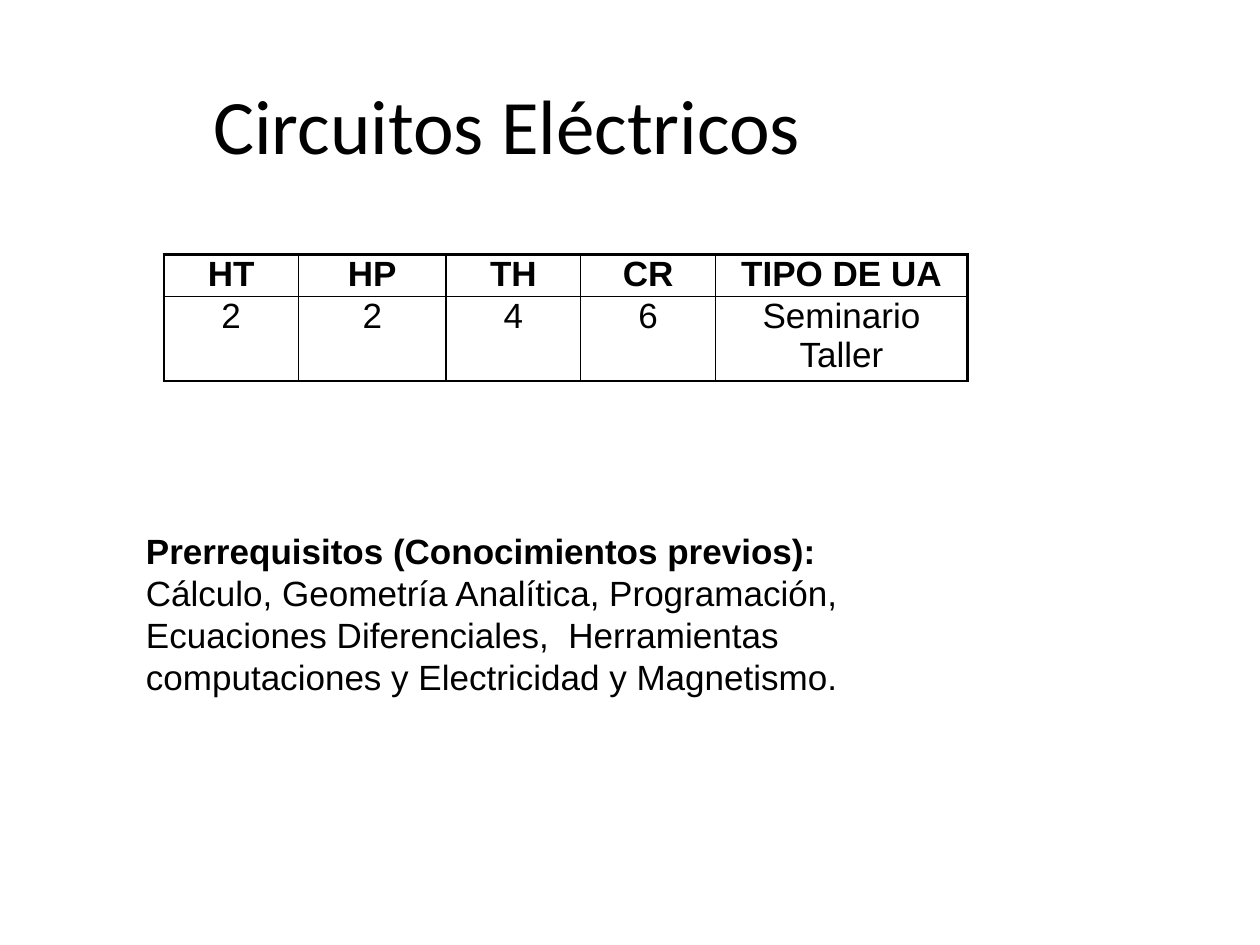
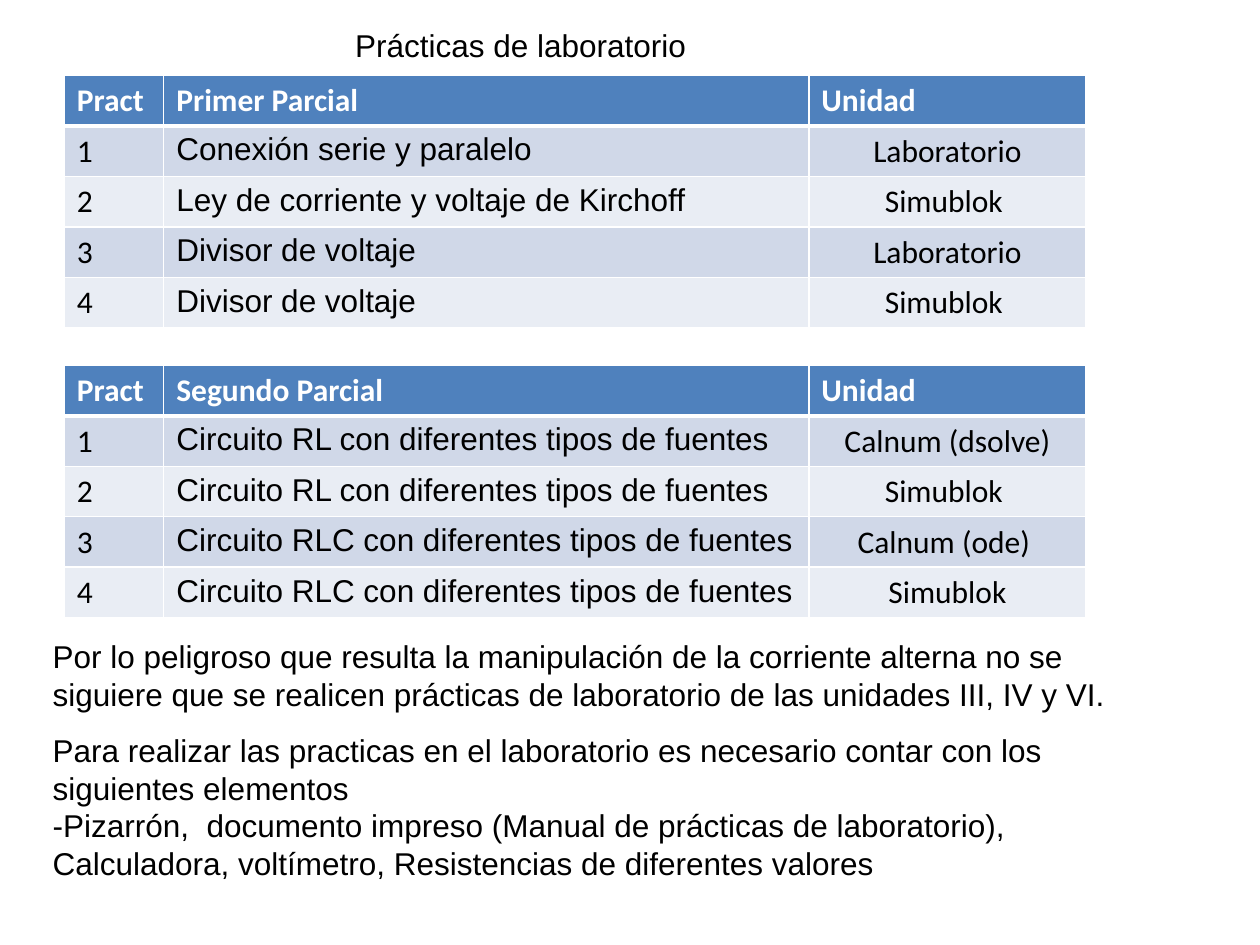
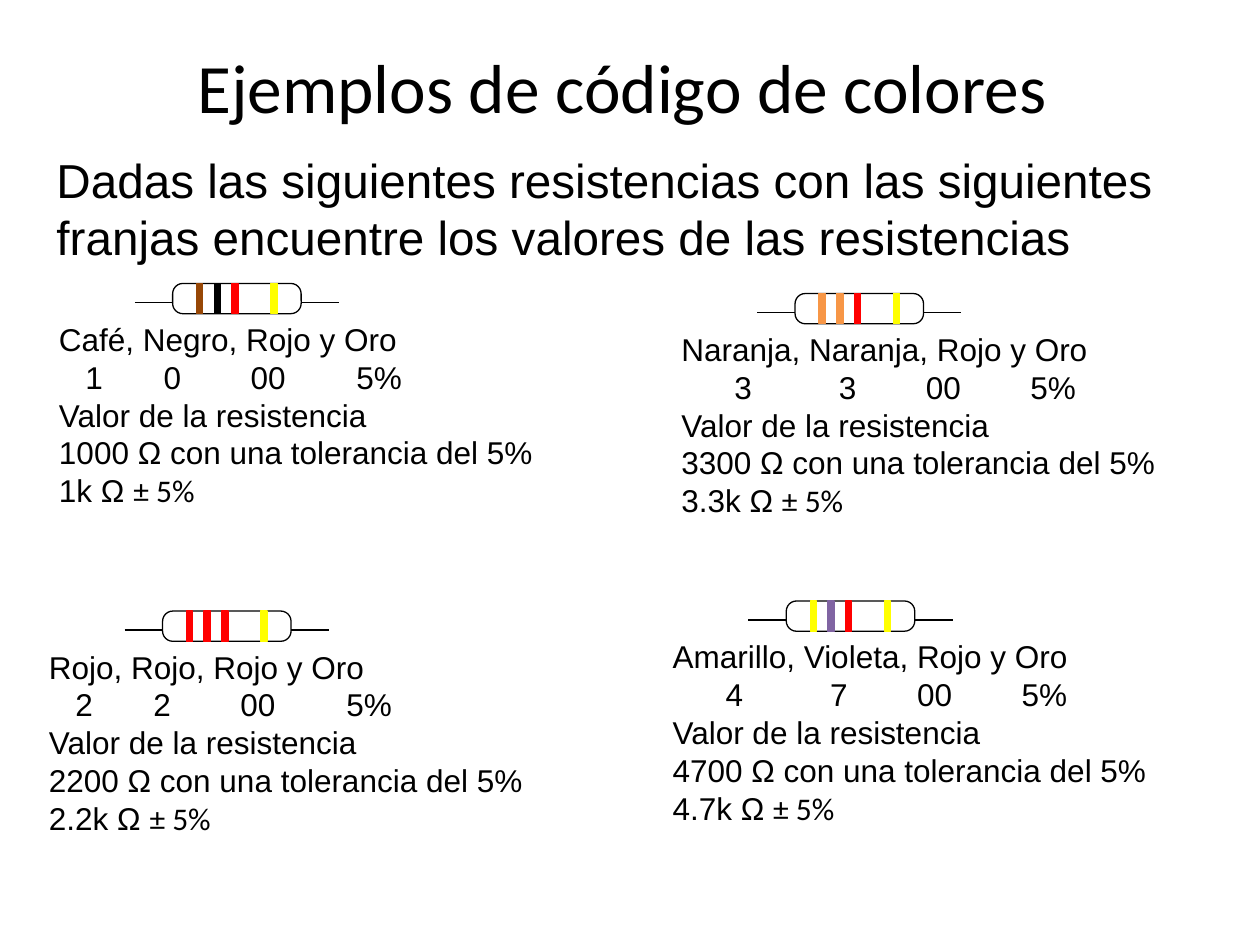
from lxml.etree import SubElement
from pptx import Presentation
from pptx.dml.color import RGBColor
from pptx.enum.shapes import MSO_CONNECTOR, MSO_SHAPE
from pptx.enum.text import MSO_ANCHOR, MSO_AUTO_SIZE, PP_ALIGN
from pptx.oxml.ns import qn
from pptx.util import Inches, Pt

COLORS = {
    "black": "000000",
    "white": "FFFFFF",
    "header": "4F81BD",
    "row_dark": "D0D8E8",
    "row_light": "E9EDF4",
    "brown": "974706",
    "red": "FF0000",
    "gold": "FFFF00",
    "orange": "F79646",
    "violet": "8064A2",
}
BODY_FONT = "Arial"
TITLE_FONT = "Calibri"
CENTER = PP_ALIGN.CENTER


def rgb(name):
    return RGBColor.from_string(COLORS[name])


def add_span(para, text, size=18, font=BODY_FONT, color="black", bold=False):
    span = para.add_run()
    span.text = text
    span.font.size = Pt(size)
    span.font.name = font
    span.font.bold = bold
    span.font.color.rgb = rgb(color)


def add_text(page, box, lines, anchor=MSO_ANCHOR.TOP, align=PP_ALIGN.LEFT,
             wrap=True, grow=True, **style):
    frame = page.shapes.add_textbox(*map(Inches, box)).text_frame
    frame.word_wrap = wrap
    frame.vertical_anchor = anchor
    frame.auto_size = MSO_AUTO_SIZE.SHAPE_TO_FIT_TEXT if grow else MSO_AUTO_SIZE.NONE
    for index, line in enumerate(lines):
        para = frame.paragraphs[0] if index == 0 else frame.add_paragraph()
        para.alignment = align
        for text, changes in [(line, {})] if isinstance(line, str) else line:
            add_span(para, text, **{**style, **changes})
    return frame


def add_title(page, box, text, size):
    add_text(page, box, [text], anchor=MSO_ANCHOR.MIDDLE, align=CENTER,
             grow=False, size=size, font=TITLE_FONT)


def set_borders(cell, color, left=1, right=1, top=1, bottom=1):
    properties = cell._tc.get_or_add_tcPr()
    for side, width in zip("LRTB", (left, right, top, bottom)):
        line = SubElement(properties, qn(f"a:ln{side}"), w=str(Pt(width)))
        fill = SubElement(line, qn("a:solidFill"))
        SubElement(fill, qn("a:srgbClr"), val=COLORS[color])


def add_grid(page, left, top, widths, heights):
    shape = page.shapes.add_table(
        len(heights), len(widths), Inches(left), Inches(top),
        Inches(sum(widths)), Inches(sum(heights)))
    for column, width in zip(shape.table.columns, widths):
        column.width = Inches(width)
    for row, height in zip(shape.table.rows, heights):
        row.height = Inches(height)
    return shape.table


def fill_cell(cell, text, align=PP_ALIGN.LEFT, **style):
    para = cell.text_frame.paragraphs[0]
    para.alignment = align
    add_span(para, text, **style)


def add_hours_table(page, left, top):
    rows = [["HT", "HP", "TH", "CR", "TIPO DE UA"],
            ["2", "2", "4", "6", "Seminario Taller"]]
    table = add_grid(page, left, top, [1.07, 1.17, 1.07, 1.07, 2], [0.33, 0.67])
    last = len(rows[0]) - 1
    for r, values in enumerate(rows):
        for c, value in enumerate(values):
            cell = table.cell(r, c)
            cell.margin_left = cell.margin_right = Inches(0.07)
            cell.margin_top = cell.margin_bottom = 0
            set_borders(cell, "black",
                        left=1.5 if c == 0 else 1, right=1.5 if c == last else 1,
                        top=1.5 if r == 0 else 1, bottom=1.5 if r == 1 else 1)
            cell.fill.background()
            fill_cell(cell, value, align=CENTER, size=20, bold=r == 0)


def add_practice_table(page, left, top, term, practices):
    rows = [("Pract", term, "Unidad")]
    rows += [(str(number), *practice) for number, practice in enumerate(practices, 1)]
    table = add_grid(page, left, top, [0.79, 5.12, 2.2], [0.4] * len(rows))
    for r, values in enumerate(rows):
        header = r == 0
        fill = "header" if header else "row_dark" if r % 2 else "row_light"
        for c, value in enumerate(values):
            cell = table.cell(r, c)
            set_borders(cell, "white", top=3 if r == 1 else 1, bottom=3 if header else 1)
            cell.fill.solid()
            cell.fill.fore_color.rgb = rgb(fill)
            fill_cell(cell, value, bold=header,
                      align=CENTER if c == 2 and not header else PP_ALIGN.LEFT,
                      font=BODY_FONT if c == 1 and not header else TITLE_FONT,
                      color="white" if header else "black")


def add_block(page, kind, box, fill, line):
    shape = page.shapes.add_shape(kind, *map(Inches, box))
    shape.shadow.inherit = False
    shape.fill.solid()
    shape.fill.fore_color.rgb = rgb(fill)
    shape.line.color.rgb = rgb(line)
    shape.line.width = Pt(0.75)
    return shape


def add_lead(page, left, top, length):
    lead = page.shapes.add_connector(
        MSO_CONNECTOR.STRAIGHT, Inches(left), Inches(top),
        Inches(left + length), Inches(top))
    lead.line.color.rgb = rgb("black")
    lead.line.width = Pt(0.75)
    SubElement(lead._element.spPr, qn("a:effectLst"))


def add_resistor(page, left, top, bands):
    width, height, lead = 1.02, 0.24, 0.3
    body = add_block(page, MSO_SHAPE.ROUNDED_RECTANGLE,
                     (left, top, width, height), "white", "black")
    body.adjustments[0] = 0.34
    for offset, color in zip((0.19, 0.33, 0.47, 0.78), bands):
        add_block(page, MSO_SHAPE.RECTANGLE,
                  (left + offset, top, 0.05, height), color, color)
    for start in (left - lead, left + width):
        add_lead(page, start, top + 0.15, lead)


def set_tabs(para, stops):
    tabs = SubElement(para._p.get_or_add_pPr(), qn("a:tabLst"))
    for stop in stops:
        SubElement(tabs, qn("a:tab"), pos=str(Inches(stop)), algn="l")


def add_example(page, left, top, names, bands, digits, stops, ohms, short):
    add_resistor(page, left + 1, top, bands)
    frame = add_text(page, (left, top + 0.24, 4, 1.62), [
        names,
        "".join("\t" + digit for digit in digits),
        "Valor de la resistencia",
        f"{ohms} Ω con una tolerancia del 5%",
        [(f"{short} Ω ", {}), ("± 5%", {"font": TITLE_FONT})],
    ])
    set_tabs(frame.paragraphs[1], stops)


def build_course(page):
    add_title(page, (0.35, 0.36, 7.35, 1.25), "Circuitos Eléctricos", 44)
    add_text(page, (1.06, 4.14, 6.06, 1.45), [
        [("Prerrequisitos (Conocimientos previos):", {"bold": True})],
        "Cálculo, Geometría Analítica, Programación, Ecuaciones Diferenciales,  "
        "Herramientas computaciones y Electricidad y Magnetismo.",
    ], anchor=MSO_ANCHOR.MIDDLE, size=20)
    add_hours_table(page, 1.3, 2.02)


def build_practices(page):
    add_text(page, (2.72, 0.16, 2.85, 0.4), ["Prácticas de laboratorio"], wrap=False)
    add_practice_table(page, 0.51, 0.6, "Primer Parcial", [
        ("Conexión serie y paralelo", "Laboratorio"),
        ("Ley de corriente y voltaje de Kirchoff", "Simublok "),
        ("Divisor de voltaje", "Laboratorio"),
        ("Divisor de voltaje", "Simublok "),
    ])
    add_practice_table(page, 0.51, 2.9, "Segundo Parcial", [
        ("Circuito RL con diferentes tipos de fuentes", "Calnum (dsolve)"),
        ("Circuito RL con diferentes tipos de fuentes", "Simublok "),
        ("Circuito RLC con diferentes tipos de fuentes", "Calnum (ode) "),
        ("Circuito RLC con diferentes tipos de fuentes", "Simublok"),
    ])
    add_text(page, (0.32, 5.01, 8.66, 0.71), [
        "Por lo peligroso que resulta la manipulación de la corriente alterna no se "
        "siguiere que se realicen prácticas de laboratorio de las unidades III, IV y VI.",
    ])
    add_text(page, (0.32, 5.75, 8.82, 1.31), [
        "Para realizar las practicas en el laboratorio es necesario contar con los "
        "siguientes elementos",
        "-Pizarrón,  documento impreso (Manual de prácticas de laboratorio), "
        "Calculadora, voltímetro, Resistencias de diferentes valores",
    ])


def build_color_code(page):
    add_title(page, (0.5, 0.3, 9, 0.77), "Ejemplos de código de colores ", 39.6)
    add_text(page, (0.35, 1.15, 9.06, 0.87), [
        "Dadas las siguientes resistencias con las siguientes franjas encuentre "
        "los valores de las resistencias",
    ], grow=False, size=27.2)
    narrow = (0.21, 0.83, 1.52, 2.36)
    wide = (0.42, 1.25, 1.94, 2.77)
    examples = [
        (0.37, 2.25, "Café, Negro, Rojo y Oro", ("brown", "black", "red", "gold"),
         ("1", "0", "00", "5%"), narrow, "1000", "1k"),
        (0.29, 4.85, "Rojo, Rojo, Rojo y Oro", ("red", "red", "red", "gold"),
         ("2", "2", "00", "5%"), narrow, "2200", "2.2k"),
        (5.31, 2.33, "Naranja, Naranja, Rojo y Oro", ("orange", "orange", "red", "gold"),
         ("3", "3", "00", "5%"), wide, "3300", "3.3k"),
        (5.24, 4.77, "Amarillo, Violeta, Rojo y Oro", ("gold", "violet", "red", "gold"),
         ("4", "7", "00", "5%"), wide, "4700", "4.7k"),
    ]
    for example in examples:
        add_example(page, *example)


def main():
    deck = Presentation()
    deck.slide_width = Inches(10)
    deck.slide_height = Inches(7.5)
    for build in (build_course, build_practices, build_color_code):
        build(deck.slides.add_slide(deck.slide_layouts[6]))
    deck.save("out.pptx")


if __name__ == "__main__":
    main()
